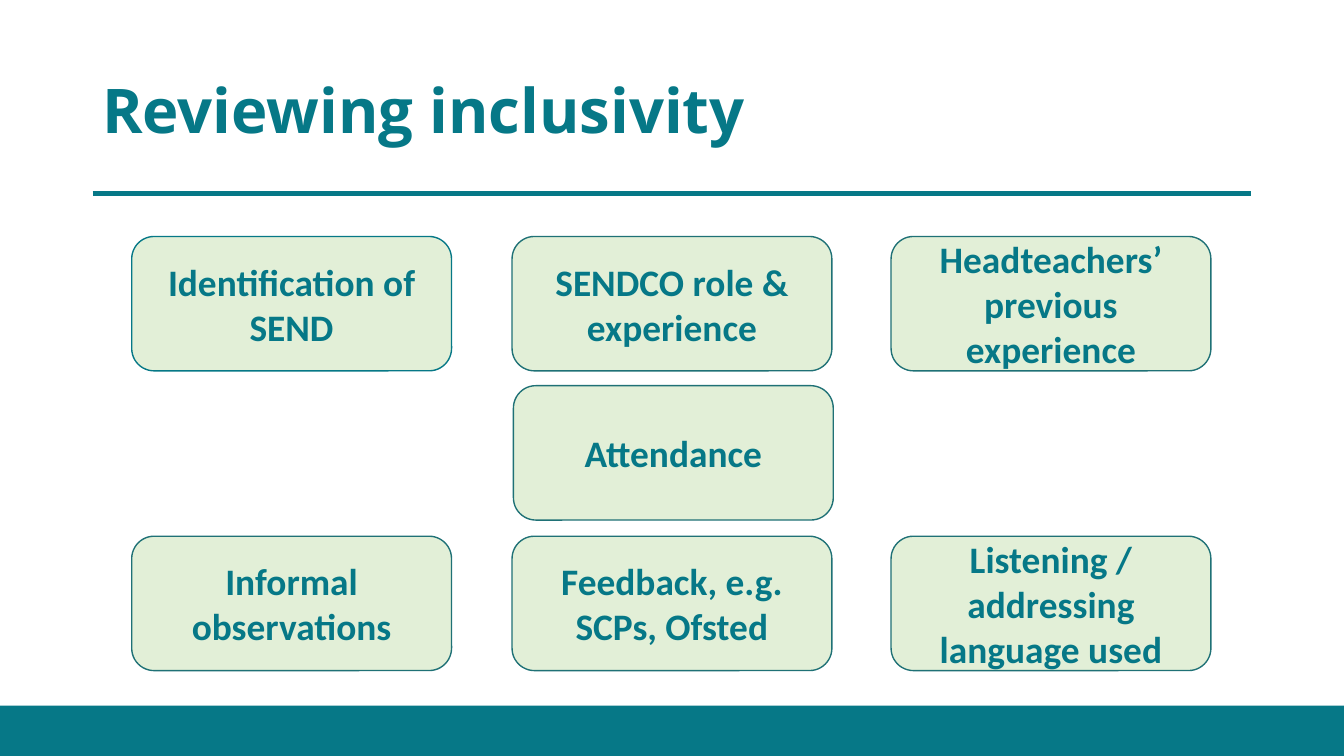
from pptx import Presentation
from pptx.dml.color import RGBColor
from pptx.enum.shapes import MSO_CONNECTOR, MSO_SHAPE
from pptx.enum.text import MSO_ANCHOR, PP_ALIGN
from pptx.oxml.ns import qn
from pptx.util import Inches, Pt
from lxml.etree import SubElement

COLORS = {"teal": "067887", "outline": "1F7176", "card": "E2EFD7"}
COLUMN_LEFTS = (0.98, 3.81, 6.63)
ROW_TOPS = (1.76, 2.87, 3.99)
TOPICS = [
    (0, 0, "Identification of SEND", "teal"),
    (0, 1, "SENDCO role & experience", "outline"),
    (0, 2, "Headteachers’ previous experience", "outline"),
    (2, 0, "Informal observations", "outline"),
    (2, 1, "Feedback, e.g. SCPs, Ofsted", "outline"),
    (2, 2, "Listening / addressing language used", "outline"),
    (1, 1, "Attendance", "outline"),
]


def color(name):
    return RGBColor.from_string(COLORS[name])


def format_text(text_frame, text, font_name, size, horizontal_inset, vertical_inset):
    text_frame.text = text
    text_frame.word_wrap = True
    text_frame.vertical_anchor = MSO_ANCHOR.MIDDLE
    text_frame.margin_left = text_frame.margin_right = Inches(horizontal_inset)
    text_frame.margin_top = text_frame.margin_bottom = Inches(vertical_inset)
    paragraph = text_frame.paragraphs[0]
    paragraph.font.name = font_name
    paragraph.font.size = Pt(size)
    paragraph.font.bold = True
    paragraph.font.color.rgb = color("teal")
    return paragraph


def add_filled_shape(slide, kind, left, top, width, height, fill):
    shape = slide.shapes.add_shape(
        kind, Inches(left), Inches(top), Inches(width), Inches(height)
    )
    shape.shadow.inherit = False
    shape.fill.solid()
    shape.fill.fore_color.rgb = color(fill)
    return shape


def add_footer(slide):
    footer = add_filled_shape(slide, MSO_SHAPE.RECTANGLE, 0, 5.25, 10, 0.39, "teal")
    footer.line.fill.background()


def add_rule(slide):
    rule = slide.shapes.add_connector(
        MSO_CONNECTOR.STRAIGHT, Inches(0.69), Inches(1.44), Inches(9.31), Inches(1.44)
    )
    rule.line.color.rgb = color("teal")
    rule.line.width = Pt(3)
    SubElement(rule.element.spPr, qn("a:effectLst"))


def set_title(slide, text):
    title = slide.shapes.title
    title.left, title.top = Inches(0.69), Inches(0.3)
    title.width, title.height = Inches(9.31), Inches(1.09)
    paragraph = format_text(title.text_frame, text, "Open Sans", 33, 0.07, 0.04)
    paragraph.alignment = PP_ALIGN.LEFT
    paragraph.line_spacing = 0.9


def add_card(slide, row, column, text, outline):
    left = COLUMN_LEFTS[column] + (0.01 if row == 1 else 0)
    card = add_filled_shape(
        slide, MSO_SHAPE.ROUNDED_RECTANGLE, left, ROW_TOPS[row], 2.38, 1, "card"
    )
    card.line.color.rgb = color(outline)
    card.line.width = Pt(0.75)
    paragraph = format_text(card.text_frame, text, "Calibri", 20, 0.1, 0.1)
    paragraph.alignment = PP_ALIGN.CENTER


def main():
    presentation = Presentation()
    presentation.slide_width = Inches(10)
    presentation.slide_height = Inches(10) * 9 // 16
    slide = presentation.slides.add_slide(presentation.slide_layouts[5])
    add_footer(slide)
    add_rule(slide)
    set_title(slide, "Reviewing inclusivity")
    for row, column, text, outline in TOPICS:
        add_card(slide, row, column, text, outline)
    presentation.save("out.pptx")


if __name__ == "__main__":
    main()
